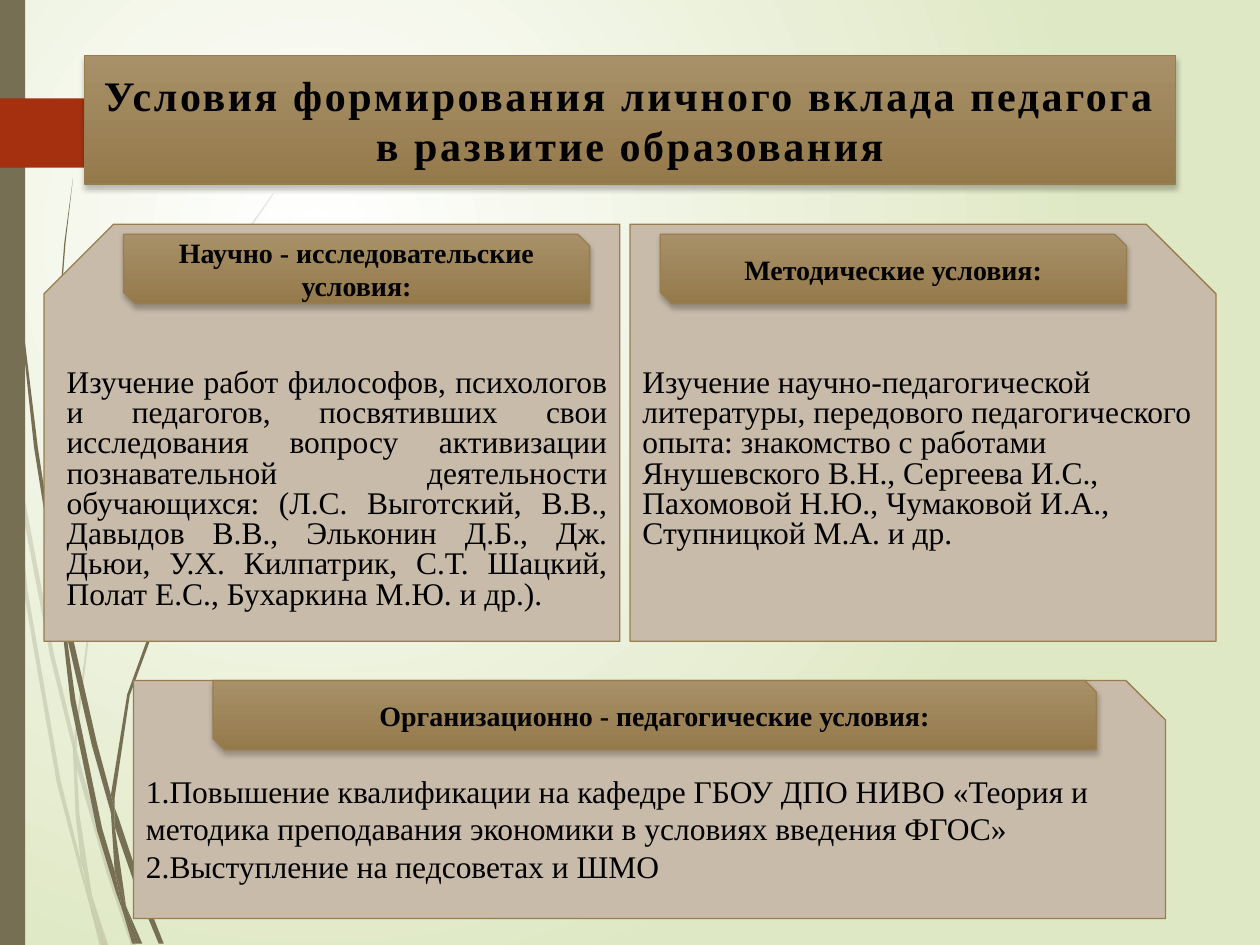
from lxml import etree
from pptx import Presentation
from pptx.dml.color import RGBColor
from pptx.enum import shapes, text
from pptx.oxml import ns
from pptx.util import Inches, Pt

WHITE = RGBColor(0xFF, 0xFF, 0xFF)
BLACK = RGBColor(0, 0, 0)
PALE_GREEN = RGBColor(0xDF, 0xE8, 0xC4)
OLIVE = RGBColor(0x76, 0x6F, 0x54)
RED = RGBColor(0xA5, 0x30, 0x10)
TAN = RGBColor(0xA8, 0x90, 0x68)
BROWN = RGBColor(0x94, 0x7A, 0x4B)
BORDER = RGBColor(0x98, 0x7D, 0x4D)
BEIGE = RGBColor(0xC8, 0xBB, 0xAA)

LEFT, CENTER, JUSTIFY = (text.PP_ALIGN.LEFT, text.PP_ALIGN.CENTER, text.PP_ALIGN.JUSTIFY)
SHAPE = shapes.MSO_SHAPE

PALE_STALKS = [
    [(.08, 3.5), (.06, 3.22), (0, 2.82), (0, 2.99), (.07, 3.44)],
    [(.4, 5.22), (.59, 5.99), (.59, 5.86), (.43, 5.2), (.1, 3.45), (.12, 3.76)],
    [(.64, 6.07), (.61, 5.96), (.61, 6.1), (.85, 6.94), (1.04, 7.5), (1.08, 7.5), (.88, 6.92)],
    [(.83, 7.5), (.86, 7.5), (.73, 7.11)],
    [(.64, 6.83), (.48, 6.19), (.22, 4.69), (.12, 3.76), (.08, 3.5), (.19, 4.7),
     (.45, 6.21), (.64, 6.93), (.7, 7.14), (.69, 7.07)],
    [(.58, 5.99), (.6, 6.46), (.64, 6.83), (.67, 6.92), (.73, 7.11), (.63, 6.46), (.61, 6.08)],
    [(.61, 5.84), (.76, 4.62), (1.11, 3.49), (1.59, 2.45), (1.87, 1.98), (2.17, 1.54),
     (2.17, 1.53), (1.86, 1.97), (1.58, 2.44), (1.1, 3.48), (.75, 4.61), (.59, 5.84), (.61, 5.96)],
    [(.7, 7.14), (.79, 7.5), (.82, 7.5)],
    [(.61, 6.08), (.61, 5.96), (.59, 5.86), (.58, 5.99)],
    [(.67, 6.92), (.65, 6.83), (.7, 7.14), (.82, 7.5), (.83, 7.5), (.73, 7.11)],
]
DARK_STALKS = [
    [(.05, 1.1), (.14, 2.33), (.27, 3.55), (.47, 4.81), (.45, 4.53), (.3, 3.55),
     (.15, 2.32), (.06, 1.09), (.03, 0), (.02, 0), (.03, .48)],
    [(.73, 5.92), (.88, 6.45), (.88, 6.31), (.77, 5.9), (.5, 4.72), (.53, 5.05)],
    [(.94, 6.49), (.91, 6.41), (.91, 6.56), (1.09, 7.08), (1.26, 7.49), (1.3, 7.49), (1.13, 7.06)],
    [(.91, 6.91), (.81, 6.57), (.6, 5.56), (.53, 5.05), (.47, 4.77), (.56, 5.57),
     (.77, 6.59), (.92, 7.08), (.97, 7.22)],
    [(.5, 4.72), (.48, 4.53), (.44, 3.49), (.48, 2.45), (.52, 1.93), (.58, 1.41),
     (.51, 1.93), (.47, 2.45), (.43, 3.49), (.45, 4.49), (.49, 4.72)],
    [(1.1, 7.49), (1.13, 7.49), (1, 7.19)],
    [(.91, 6.33), (1.03, 5.52), (1.31, 4.76), (1.69, 4.06), (1.91, 3.74), (2.16, 3.44),
     (1.91, 3.73), (1.68, 4.05), (1.29, 4.74), (1.01, 5.51), (.88, 6.31), (.91, 6.41)],
    [(.97, 7.22), (1.05, 7.49), (1.08, 7.49)],
    [(.88, 6.45), (.91, 6.91), (.96, 7.06), (1, 7.19), (.91, 6.56), (.9, 6.51)],
    [(.88, 6.45), (.91, 6.56), (.91, 6.41), (.88, 6.31)],
    [(.96, 7.06), (.91, 6.91), (.97, 7.22), (1.08, 7.49), (1.1, 7.49), (1, 7.19)],
]
POINTER = [(0, .78), (1.21, .78), (1.24, .79), (1.49, 1.04), (1.49, 1.07),
           (1.24, 1.32), (1.21, 1.33), (0, 1.33)]


def add_xml(parent, tag, **attrs):
    return etree.SubElement(parent, ns.qn(tag), attrs)


class SlideMaker:
    font = {"name": "Times New Roman", "size": Pt(18), "bold": False}

    def __init__(self, s):
        self.s = s

    def gradient(self, fill, *colors):
        fill.gradient()
        for stop, color in zip(fill.gradient_stops, colors):
            stop.color.rgb = color

    def background(self):
        fill = self.s.background.fill
        self.gradient(fill, WHITE, PALE_GREEN)
        lin = self.s._element.find(".//" + ns.qn("a:lin"))
        grad = lin.getparent()
        grad.remove(lin)
        circle = add_xml(grad, "a:path", path="circle")
        add_xml(circle, "a:fillToRect", l="50000", t="50000", r="100000", b="100000")

    def outline(self, points, color, parent=None, alpha=None):
        pts = [(Inches(x), Inches(y)) for x, y in points]
        builder = (parent or self.s).shapes.build_freeform(*pts[0])
        builder.add_line_segments(pts[1:], close=True)
        sp = builder.convert_to_shape()
        self.paint(sp, color)
        if alpha:
            rgb = sp._element.spPr.find(".//" + ns.qn("a:srgbClr"))
            add_xml(rgb, "a:alpha", val=str(alpha * 1000))

    def stalks(self, outlines, alpha=None):
        group = self.s.shapes.add_group_shape()
        for points in outlines:
            self.outline(points, OLIVE, group, alpha)

    def paint(self, sp, color, border=None):
        sp.shadow.inherit = False
        sp.fill.solid()
        sp.fill.fore_color.rgb = color
        if border:
            sp.line.color.rgb = border
            sp.line.width = Pt(.75)
        else:
            sp.line.fill.background()

    def shape(self, kind, box, color, border=None, flip=False):
        sp = self.s.shapes.add_shape(kind, *map(Inches, box))
        self.paint(sp, color, border)
        if flip:
            sp._element.spPr.xfrm.set("flipH", "1")
        return sp

    def bevel(self, sp):
        self.paint(sp, TAN, BORDER)
        self.gradient(sp.fill, TAN, BROWN)
        sp.fill.gradient_angle = 270
        effects = sp._element.spPr.find(ns.qn("a:effectLst"))
        shadow = add_xml(effects, "a:outerShdw", blurRad="38100", dist="25400",
                         dir="5400000", rotWithShape="0")
        add_xml(add_xml(shadow, "a:srgbClr", val="000000"), "a:alpha", val="25000")

    def set_text(self, sp, lines, align=LEFT, anchor=text.MSO_ANCHOR.MIDDLE, top=.05, spacing=None, **fmt):
        tf = sp.text_frame
        frame = {"word_wrap": True, "auto_size": text.MSO_AUTO_SIZE.NONE,
                 "vertical_anchor": anchor, "margin_top": Inches(top)}
        for key, value in frame.items():
            setattr(tf, key, value)
        for i, line in enumerate(lines):
            p = tf.add_paragraph() if i else tf.paragraphs[0]
            p.alignment = align
            p.line_spacing = spacing
            r = p.add_run()
            r.text = line
            for key, value in {**self.font, **fmt}.items():
                setattr(r.font, key, value)
            r.font.color.rgb = BLACK

    def title(self, box, line):
        sp = self.s.shapes.title
        self.s.shapes._spTree.append(sp._element)
        sp.left, sp.top, sp.width, sp.height = map(Inches, box)
        geom = add_xml(sp._element.spPr, "a:prstGeom", prst="snip2DiagRect")
        add_xml(geom, "a:avLst")
        self.bevel(sp)
        self.set_text(sp, [line], CENTER, size=Pt(24), bold=True)
        sp.text_frame.paragraphs[0].runs[0].font._element.set("spc", "150")

    def heading(self, box, line):
        sp = self.shape(SHAPE.SNIP_2_DIAG_RECTANGLE, box, TAN)
        self.bevel(sp)
        self.set_text(sp, [line], CENTER, size=Pt(16), bold=True)

    def passage(self, box, line, align=LEFT, top=.05):
        sp = self.s.shapes.add_textbox(*map(Inches, box))
        self.set_text(sp, [line], align, text.MSO_ANCHOR.TOP, top, .8)


def main():
    prs = Presentation()
    prs.slide_width, prs.slide_height = Inches(10), Inches(7.5)
    m = SlideMaker(prs.slides.add_slide(prs.slide_layouts[5]))
    m.background()
    m.stalks(PALE_STALKS, alpha=20)
    m.stalks(DARK_STALKS)
    m.shape(SHAPE.RECTANGLE, (0, 0, .2, 7.5), OLIVE)
    m.outline(POINTER, RED)
    m.title((.67, .44, 8.66, 1.02), "Условия формирования личного вклада педагога в развитие образования")

    panel = SHAPE.SNIP_1_RECTANGLE
    m.shape(panel, (.35, 1.78, 4.57, 3.31), BEIGE, BORDER, flip=True)
    m.shape(panel, (5, 1.78, 4.65, 3.31), BEIGE, BORDER)
    m.heading((.98, 1.86, 3.7, .55), "Научно - исследовательские условия:")
    m.heading((5.24, 1.86, 3.7, .55), "Методические условия:")
    m.passage((.43, 2.65, 4.49, 2.54),
              "Изучение работ философов, психологов и педагогов, посвятивших свои исследования "
              "вопросу активизации познавательной деятельности обучающихся: (Л.С. Выготский, В.В., "
              "Давыдов В.В., Эльконин Д.Б., Дж. Дьюи, У.Х. Килпатрик, С.Т. Шацкий, Полат Е.С., "
              "Бухаркина М.Ю. и др.).", JUSTIFY, top=.28)
    m.passage((5, 2.88, 4.72, 1.74),
              "Изучение научно-педагогической литературы, передового педагогического опыта: "
              "знакомство с работами Янушевского В.Н., Сергеева И.С., Пахомовой Н.Ю., "
              "Чумаковой И.А., Ступницкой М.А. и др.")

    tasks = m.shape(panel, (1.06, 5.4, 8.19, 1.89), BEIGE, BORDER)
    m.set_text(tasks, ["1.Повышение квалификации на кафедре ГБОУ ДПО НИВО «Теория и методика "
                       "преподавания экономики в условиях введения ФГОС»",
                       "2.Выступление на педсоветах и ШМО"], top=.35)
    m.heading((1.69, 5.4, 7.01, .55), "Организационно - педагогические условия:")
    prs.save("out.pptx")


if __name__ == "__main__":
    main()
